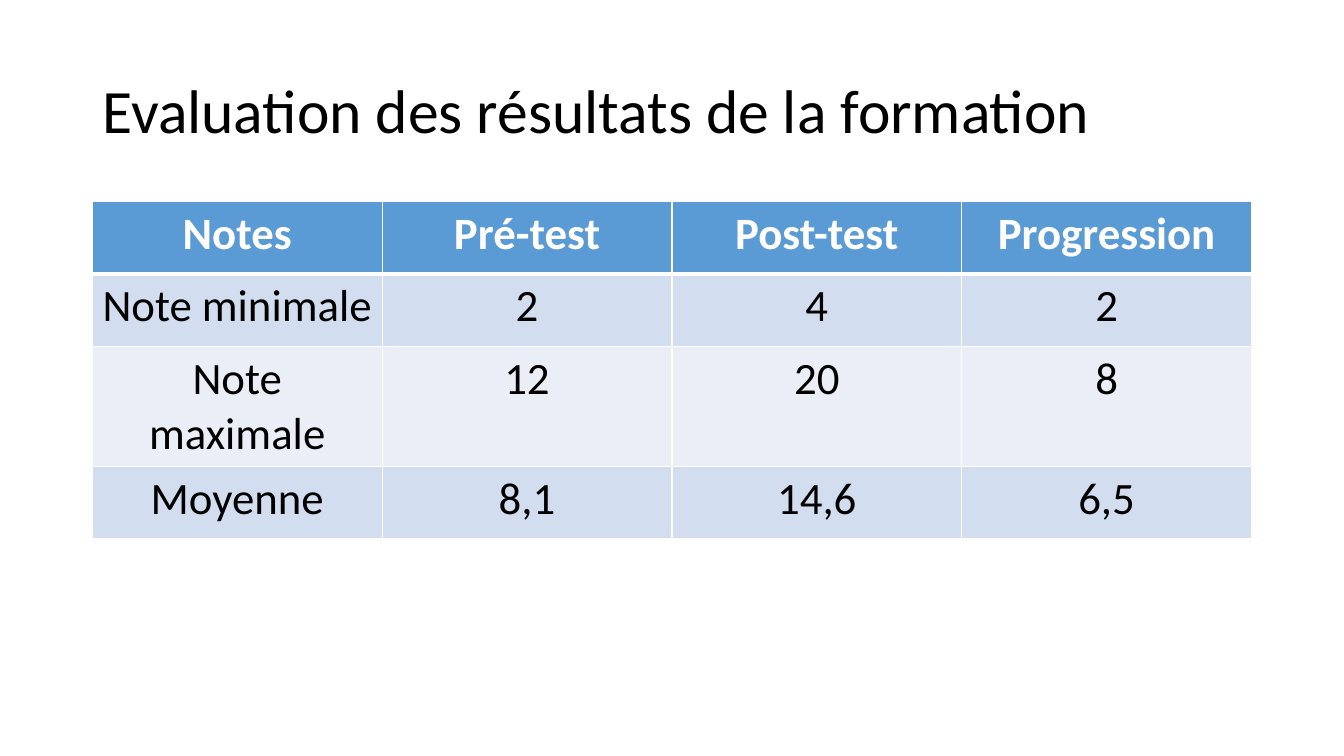
"""Build a slide with a table of training test results."""
from lxml import etree
from pptx import Presentation
from pptx.dml.color import RGBColor
from pptx.enum.text import MSO_ANCHOR, MSO_AUTO_SIZE, PP_ALIGN
from pptx.oxml.ns import qn
from pptx.util import Pt

LEFT, CENTER = PP_ALIGN.LEFT, PP_ALIGN.CENTER
MIDDLE, NO_AUTOFIT = MSO_ANCHOR.MIDDLE, MSO_AUTO_SIZE.NONE

TITLE = "Evaluation des résultats de la formation"
RESULTS = [
    ("Notes", "Pré-test", "Post-test", "Progression"),
    ("Note minimale", "2", "4", "2"),
    ("Note maximale", "12", "20", "8"),
    ("Moyenne", "8,1", "14,6", "6,5"),
]
FONT = "Calibri"
BLACK, WHITE = "000000", "FFFFFF"
HEADER_FILL = "5B9BD5"
BAND_FILLS = ("EAEFF7", "D2DEEF")
MARGIN, CONTENT_WIDTH = 66, 828
TABLE_TOP, ROW_HEIGHT = 144, 51.84


def color(value):
    return RGBColor.from_string(value)


def format_text(para, size, ink, align, bold=False):
    para.alignment = align
    for span in para.runs:
        span.font.name = FONT
        span.font.size = Pt(size)
        span.font.bold = bold
        span.font.color.rgb = color(ink)


def add_borders(cell, top, bottom):
    properties = cell._tc.get_or_add_tcPr()
    for side, width in (("L", 1), ("R", 1), ("T", top), ("B", bottom)):
        line = etree.SubElement(properties, qn(f"a:ln{side}"), w=str(Pt(width)))
        fill = etree.SubElement(line, qn("a:solidFill"))
        etree.SubElement(fill, qn("a:srgbClr"), val=WHITE)


def add_title(page):
    title = page.shapes.title
    title.left, title.top = Pt(MARGIN), Pt(28.75)
    title.width, title.height = Pt(CONTENT_WIDTH), Pt(104.4)
    frame = title.text_frame
    frame.text = TITLE
    frame.vertical_anchor = MIDDLE
    frame.auto_size = NO_AUTOFIT
    frame.paragraphs[0].line_spacing = 0.9
    format_text(frame.paragraphs[0], 44, BLACK, LEFT)


def add_results(page):
    row_count, column_count = len(RESULTS), len(RESULTS[0])
    table = page.shapes.add_table(
        row_count, column_count, Pt(MARGIN), Pt(TABLE_TOP),
        Pt(CONTENT_WIDTH), Pt(ROW_HEIGHT * row_count)).table
    for row, values in enumerate(RESULTS):
        header = row == 0
        for column, value in enumerate(values):
            cell = table.cell(row, column)
            cell.text = value
            format_text(cell.text_frame.paragraphs[0], 32,
                        WHITE if header else BLACK, CENTER, header)
            add_borders(cell, 3 if row == 1 else 1, 3 if header else 1)
            cell.fill.solid()
            cell.fill.fore_color.rgb = color(
                HEADER_FILL if header else BAND_FILLS[row % 2])


def main():
    deck = Presentation()
    deck.slide_width, deck.slide_height = Pt(960), Pt(540)
    page = deck.slides.add_slide(deck.slide_layouts[5])
    add_title(page)
    add_results(page)
    deck.save("out.pptx")


if __name__ == "__main__":
    main()
